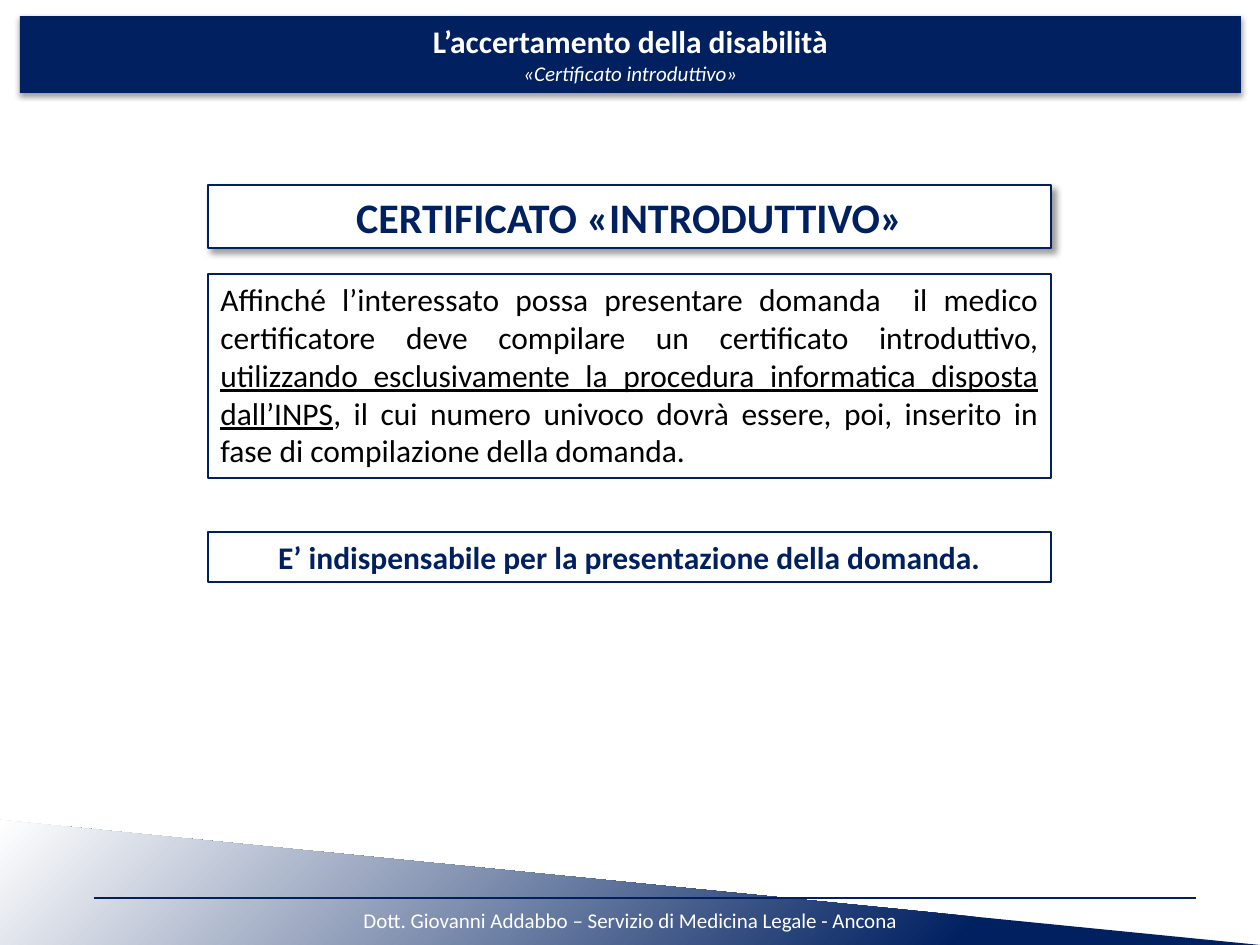
from pptx import Presentation
from pptx.dml.color import RGBColor
from pptx.enum.shapes import MSO_CONNECTOR, MSO_SHAPE
from pptx.enum.text import MSO_ANCHOR, MSO_AUTO_SIZE, PP_ALIGN
from pptx.oxml import parse_xml
from pptx.oxml.ns import nsdecls
from pptx.util import Pt

PX = 914400 / 126
NAVY, WHITE, BLACK = "002060", "FFFFFF", "000000"
FONT = "Calibri"

HEADER = [
    ("L’accertamento della disabilità", dict(size=18, bold=True)),
    ("«Certificato introduttivo»", dict(size=12, bold=False, italic=True)),
]
FOOTER = "Dott. Giovanni Addabbo – Servizio di Medicina Legale - Ancona"
HEADING = "CERTIFICATO «INTRODUTTIVO»"
CLOSING = "E’ indispensabile per la presentazione della domanda."
EXPLANATION = [  # text, underlined
    ("Affinché l’interessato possa presentare domanda  il medico certificatore "
     "deve compilare un certificato introduttivo, ", False),
    ("utilizzando esclusivamente la procedura informatica disposta dall’INPS", True),
    (", il cui numero univoco dovrà essere, poi, inserito in fase di compilazione "
     "della domanda.", False),
]

BAND_LEFT, BAND_WIDTH = 20, 1221
PANEL_LEFT, PANEL_WIDTH = 208, 843


def px(*lengths):
    return [round(length * PX) for length in lengths]


def color(value):
    return RGBColor.from_string(value)


def format_text(paragraph, size, ink, bold=False, italic=False, align=PP_ALIGN.CENTER):
    paragraph.alignment = align
    font = paragraph.font
    font.name, font.size, font.bold, font.italic = FONT, Pt(size), bold, italic
    font.color.rgb = color(ink)


def add_shadow(shape, alpha, blur, distance, angle):
    """Outer shadow: alpha in percent, blur and distance in points, angle in degrees."""
    properties = shape._element.spPr
    for effects in properties.findall("{*}effectLst"):
        properties.remove(effects)
    properties.append(parse_xml(
        f'<a:effectLst {nsdecls("a")}><a:outerShdw blurRad="{Pt(blur)}" '
        f'dist="{Pt(distance)}" dir="{angle * 60000}" algn="tl" rotWithShape="0">'
        f'<a:srgbClr val="{BLACK}"><a:alpha val="{alpha * 1000}"/></a:srgbClr>'
        '</a:outerShdw></a:effectLst>'))


def add_panel(slide, top, height, fill=None):
    panel = slide.shapes.add_shape(
        MSO_SHAPE.RECTANGLE, *px(PANEL_LEFT, top, PANEL_WIDTH, height))
    panel.shadow.inherit = False
    if fill:
        panel.fill.solid()
        panel.fill.fore_color.rgb = color(fill)
    else:
        panel.fill.background()
    panel.line.color.rgb = color(NAVY)
    panel.line.width = Pt(0.75)
    panel.text_frame.word_wrap = True
    panel.text_frame.vertical_anchor = MSO_ANCHOR.TOP
    return panel


def add_footer(slide):
    wedge = slide.shapes.add_shape(MSO_SHAPE.ISOSCELES_TRIANGLE, *px(0, 820, 1260, 125))
    wedge.adjustments[0] = 0
    wedge.shadow.inherit = False
    wedge.line.fill.background()
    wedge.fill.gradient()
    wedge.fill.gradient_angle = 135
    for stop, position, shade in zip(wedge.fill.gradient_stops, (0.22, 1), (NAVY, WHITE)):
        stop.position = position
        stop.color.rgb = color(shade)

    box = slide.shapes.add_textbox(*px(BAND_LEFT, 901, BAND_WIDTH, 38))
    box.text_frame.word_wrap = True
    box.text_frame.text = FOOTER
    format_text(box.text_frame.paragraphs[0], 12, WHITE)

    rule = slide.shapes.add_connector(MSO_CONNECTOR.STRAIGHT, *px(94, 898, 1196, 898))
    rule.line.color.rgb = color(NAVY)
    rule.line.width = Pt(0.75)
    rule._element.spPr.append(parse_xml(f'<a:effectLst {nsdecls("a")}/>'))


def fill_header(title):
    title.left, title.top, title.width, title.height = px(BAND_LEFT, 16, BAND_WIDTH, 77)
    title.fill.solid()
    title.fill.fore_color.rgb = color(NAVY)
    add_shadow(title, 38, 3.1, 1.6, 90)
    frame = title.text_frame
    frame.auto_size = MSO_AUTO_SIZE.NONE
    frame.vertical_anchor = MSO_ANCHOR.TOP
    frame.text = "\n".join(text for text, _ in HEADER)
    for paragraph, (_, style) in zip(frame.paragraphs, HEADER):
        format_text(paragraph, ink=WHITE, **style)


def main():
    deck = Presentation()
    deck.slide_width, deck.slide_height = px(1260, 945)
    slide = deck.slides.add_slide(deck.slide_layouts[5])
    add_footer(slide)
    fill_header(slide.shapes.title)

    explanation = add_panel(slide, 274, 204).text_frame.paragraphs[0]
    format_text(explanation, 18, BLACK, align=PP_ALIGN.JUSTIFY)
    for text, underlined in EXPLANATION:
        span = explanation.add_run()
        span.text = text
        span.font.underline = underlined

    heading = add_panel(slide, 185, 63, WHITE)
    add_shadow(heading, 40, 4, 3, 45)
    closing = add_panel(slide, 532, 50)
    for panel, text, size in ((heading, HEADING, 24), (closing, CLOSING, 18)):
        panel.text_frame.text = text
        format_text(panel.text_frame.paragraphs[0], size, NAVY, bold=True)

    deck.save("out.pptx")


if __name__ == "__main__":
    main()
